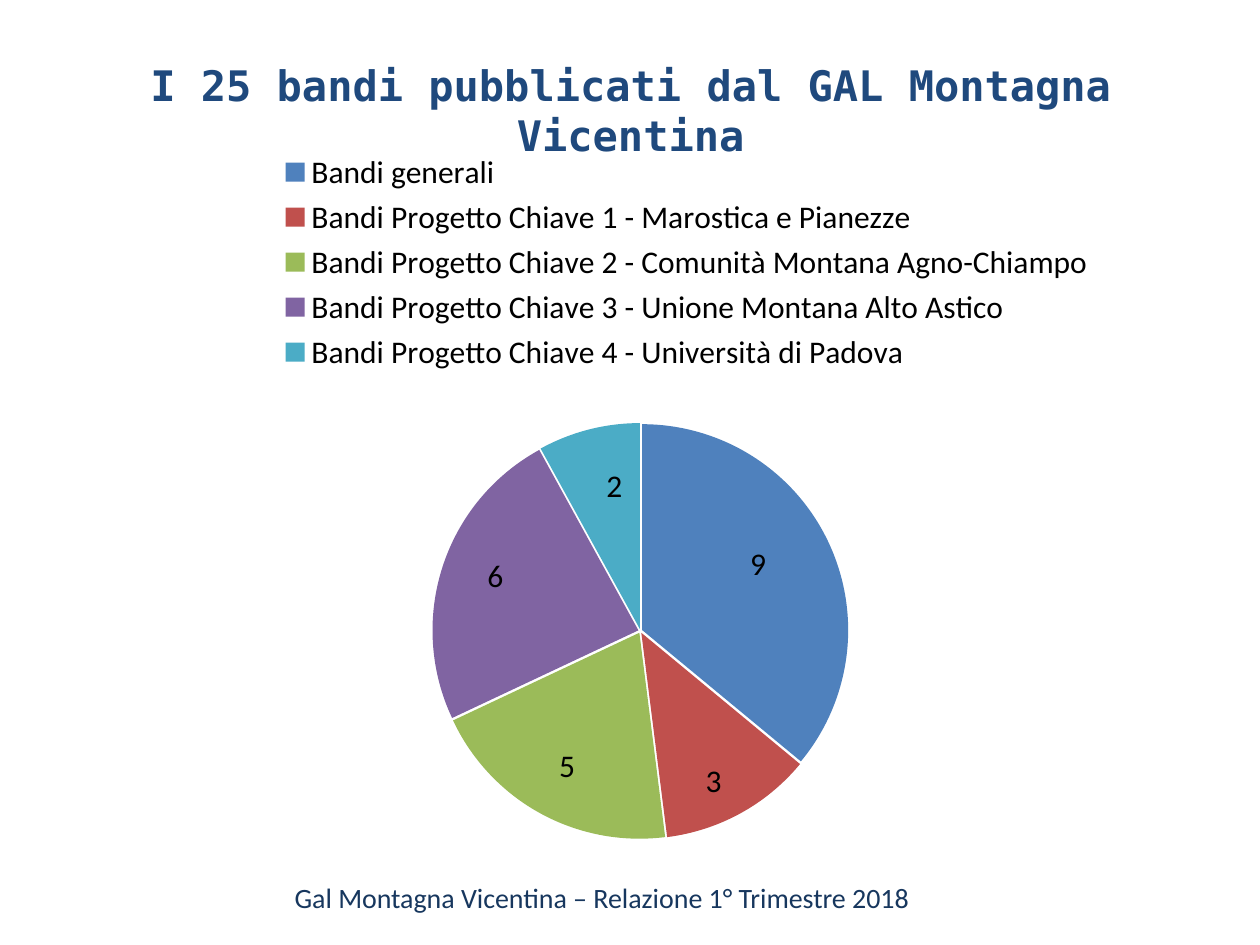
"""Build the slide with the pie chart of the 25 published calls."""
import pptx
import pptx.chart.data
import pptx.dml.color
import pptx.enum.chart
import pptx.enum.text
import pptx.oxml
import pptx.oxml.ns
import pptx.util
from pptx.util import Cm

TITLE = "I 25 bandi pubblicati dal GAL Montagna Vicentina"
FOOTER = "Gal Montagna Vicentina – Relazione 1° Trimestre 2018"
COLOURS = {"title": "1F497D", "footer": "17375E", "text": "000000"}
SLICES = [
    ("Bandi generali", 9, "4F81BD", (0.02, -0.03)),
    ("Bandi Progetto Chiave 1 - Marostica e Pianezze", 3, "C0504D", (0.02, 0.08)),
    ("Bandi Progetto Chiave 2 - Comunità Montana Agno-Chiampo", 5, "9BBB59", (-0.02, 0.06)),
    ("Bandi Progetto Chiave 3 - Unione Montana Alto Astico", 6, "8064A2", (-0.04, -0.03)),
    ("Bandi Progetto Chiave 4 - Università di Padova", 2, "4BACC6", (0, -0.06)),
]
PLOT_AREA = (0.325, 0.412, 0.368, 0.574)
LEGEND_AREA = (0.18, 0.03, 0.74, 0.32)


def set_font(font, name, size, colour, bold=False):
    font.name = name
    font.size = pptx.util.Pt(size)
    font.bold = bold
    font.color.rgb = pptx.dml.color.RGBColor.from_string(colour)


def add_text(slide, area, text, wrap, alignment, *font_settings):
    box = slide.shapes.add_textbox(*map(Cm, area))
    box.text_frame.word_wrap = wrap
    paragraph = box.text_frame.paragraphs[0]
    paragraph.text = text
    paragraph.alignment = alignment
    set_font(paragraph.font, *font_settings)


def chart_xml(tag, attributes="", content=""):
    namespace = pptx.oxml.ns.nsdecls("c")
    return pptx.oxml.parse_xml(f"<c:{tag} {namespace} {attributes}>{content}</c:{tag}>")


def manual_layout(numbers, modes=""):
    values = "".join(f'<c:{name} val="{number}"/>' for name, number in zip("xywh", numbers))
    return chart_xml("layout", content=f"<c:manualLayout>{modes}{values}</c:manualLayout>")


def place(parent, previous, layout):
    for old_layout in parent.xpath("./c:layout"):
        parent.remove(old_layout)
    if previous is None:
        parent.insert(0, layout)
    else:
        previous.addnext(layout)


def add_pie(slide):
    data = pptx.chart.data.CategoryChartData()
    data.categories = [name for name, *_ in SLICES]
    data.add_series("Series 1", [value for _, value, *_ in SLICES])
    chart = slide.shapes.add_chart(
        pptx.enum.chart.XL_CHART_TYPE.PIE, Cm(1.3), Cm(2.51), Cm(22.81), Cm(14.61), data
    ).chart
    set_font(chart.font, "Calibri", 18, COLOURS["text"])
    chart.has_title = False
    chart.has_legend = True
    chart.legend.position = pptx.enum.chart.XL_LEGEND_POSITION.TOP
    chart.legend.include_in_layout = False
    set_font(chart.legend.font, "Calibri", 18, COLOURS["text"])
    plot = chart.plots[0]
    plot.vary_by_categories = True
    series = plot.series[0]
    series.data_labels.show_value = True
    series.data_labels.show_percentage = False
    set_font(series.data_labels.font, "Calibri", 18, COLOURS["text"])
    for index, (_, _, colour, _) in enumerate(SLICES):
        point = series.points[index]
        point.format.fill.solid()
        point.format.fill.fore_color.rgb = pptx.dml.color.RGBColor.from_string(colour)
        point.data_label.position = pptx.enum.chart.XL_LABEL_POSITION.CENTER

    root = chart.element
    root.xpath(".//c:dPt")[0].addprevious(chart_xml("explosion", 'val="1"'))
    for label, (*_, offset) in zip(root.xpath(".//c:dLbl"), SLICES):
        place(label, label.xpath("./c:idx")[0], manual_layout(offset))
    edges = '<c:xMode val="edge"/><c:yMode val="edge"/>'
    inner = '<c:layoutTarget val="inner"/>' + edges
    place(root.xpath(".//c:plotArea")[0], None, manual_layout(PLOT_AREA, inner))
    legend = root.xpath(".//c:legend")[0]
    place(legend, legend.xpath("./c:legendPos")[0], manual_layout(LEGEND_AREA, edges))


def main():
    presentation = pptx.Presentation()
    presentation.slide_width, presentation.slide_height = Cm(25.4), Cm(19.05)
    slide = presentation.slides.add_slide(presentation.slide_layouts[6])
    align = pptx.enum.text.PP_ALIGN
    add_text(slide, (2.11, 1.07, 21.21, 1.27), TITLE, True, align.CENTER,
             "DejaVu Sans Mono", 24, COLOURS["title"], True)
    add_pie(slide)
    add_text(slide, (5.69, 17.63, 13.06, 0.94), FOOTER, False, align.LEFT,
             "Calibri", 16, COLOURS["footer"])
    presentation.save("out.pptx")


if __name__ == "__main__":
    main()
